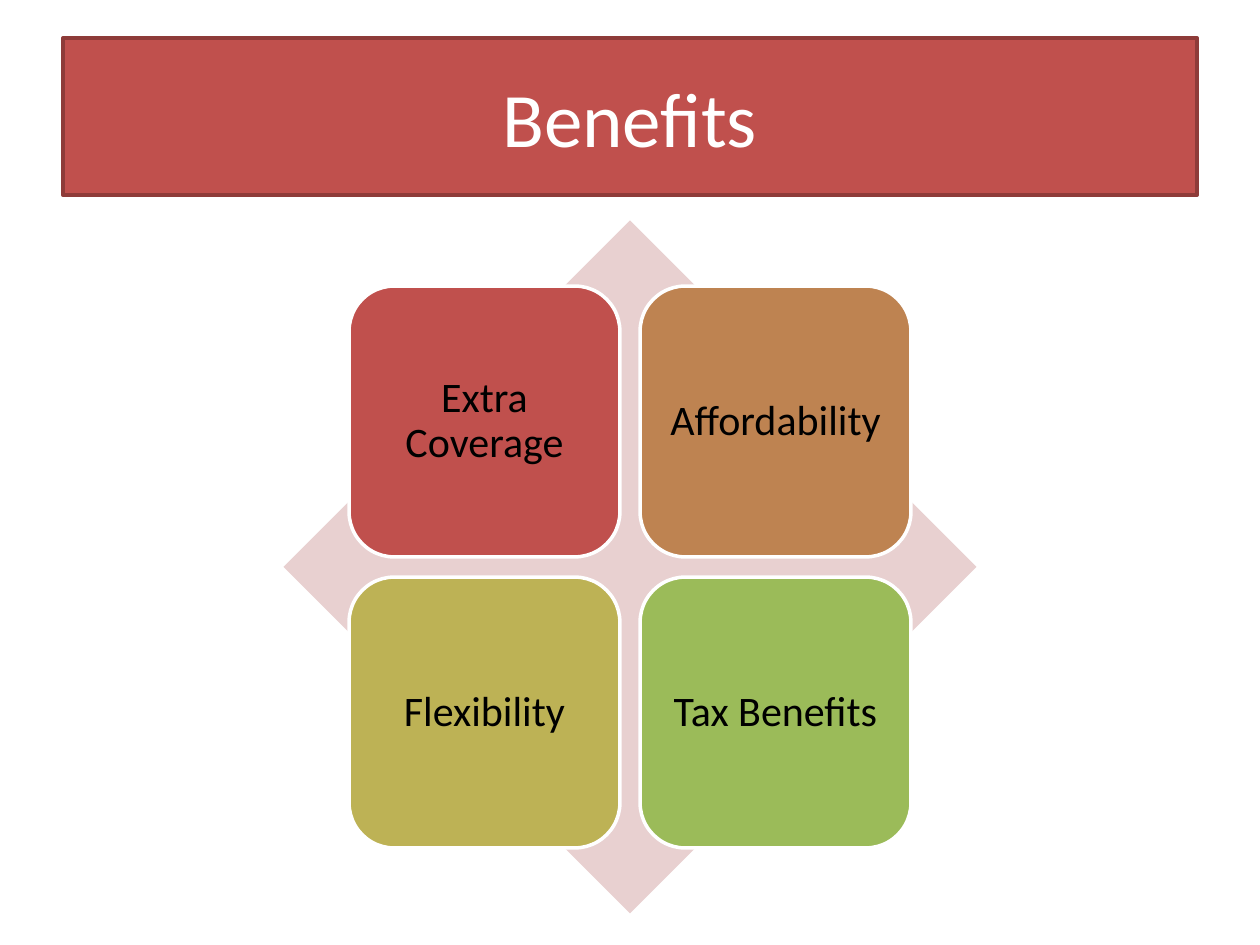
from pptx import Presentation
from pptx.dml.color import RGBColor
from pptx.enum.shapes import MSO_SHAPE
from pptx.enum.text import MSO_ANCHOR, PP_ALIGN
from pptx.util import Inches, Pt

TITLE = "Benefits"
BENEFITS = [
    ("Extra Coverage", "red"),
    ("Affordability", "orange"),
    ("Flexibility", "olive"),
    ("Tax Benefits", "green"),
]
COLORS = {
    "red": "C0504D",
    "dark_red": "8E3B39",
    "pink": "E8D0D0",
    "orange": "BE8351",
    "olive": "BDB255",
    "green": "9BBB59",
    "white": "FFFFFF",
    "black": "000000",
}
FONT = "Calibri"
COLUMNS = 2
TILE_LEFT, TILE_TOP = 2.77, 2.27
TILE_SIZE, TILE_STEP = 2.15, 2.31


def color(name):
    return RGBColor.from_string(COLORS[name])


def add_filled_shape(slide, kind, left, top, width, height, fill, line=None):
    shape = slide.shapes.add_shape(
        kind, Inches(left), Inches(top), Inches(width), Inches(height)
    )
    shape.shadow.inherit = False
    shape.fill.solid()
    shape.fill.fore_color.rgb = color(fill)
    if line:
        shape.line.color.rgb = color(line)
        shape.line.width = Pt(2)
    else:
        shape.line.fill.background()
    return shape


def add_label(shape, text, size, text_color, margin, line_spacing=1.0):
    frame = shape.text_frame
    frame.word_wrap = True
    frame.vertical_anchor = MSO_ANCHOR.MIDDLE
    frame.margin_left = frame.margin_right = Inches(margin)
    frame.margin_top = frame.margin_bottom = Inches(margin)
    paragraph = frame.paragraphs[0]
    paragraph.alignment = PP_ALIGN.CENTER
    paragraph.line_spacing = line_spacing
    run = paragraph.add_run()
    run.text = text
    run.font.name = FONT
    run.font.size = Pt(size)
    run.font.color.rgb = color(text_color)


def main():
    presentation = Presentation()
    presentation.slide_width = Inches(10)
    presentation.slide_height = Inches(7.5)
    slide = presentation.slides.add_slide(presentation.slide_layouts[6])

    banner = add_filled_shape(
        slide, MSO_SHAPE.RECTANGLE, 0.5, 0.3, 9, 1.25, "red", "dark_red"
    )
    add_label(banner, TITLE, 44, "white", 0.05)

    add_filled_shape(slide, MSO_SHAPE.DIAMOND, 2.25, 1.75, 5.5, 5.5, "pink")

    for index, (text, fill) in enumerate(BENEFITS):
        row, column = divmod(index, COLUMNS)
        tile = add_filled_shape(
            slide,
            MSO_SHAPE.ROUNDED_RECTANGLE,
            TILE_LEFT + column * TILE_STEP,
            TILE_TOP + row * TILE_STEP,
            TILE_SIZE,
            TILE_SIZE,
            fill,
            "white",
        )
        add_label(tile, text, 24, "black", 0, 0.9)

    presentation.save("out.pptx")


if __name__ == "__main__":
    main()
